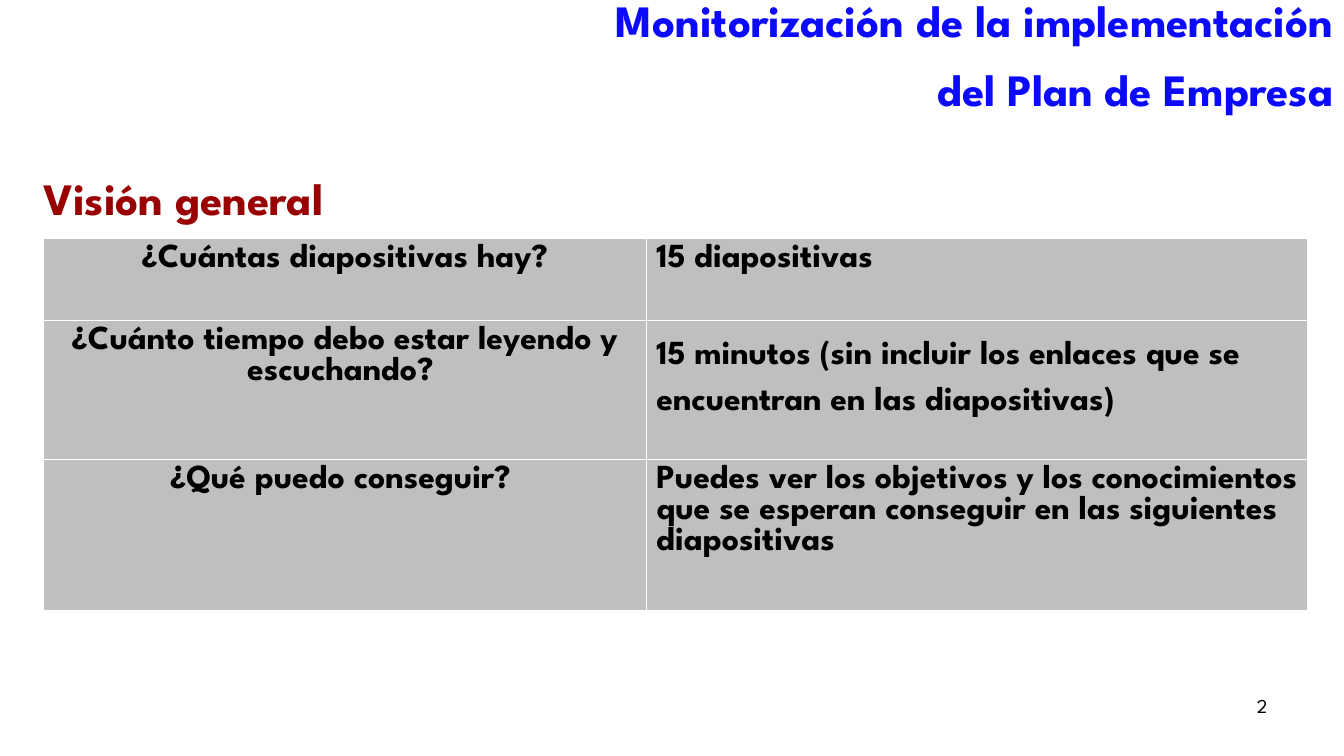
from lxml import etree
from pptx import Presentation
from pptx.dml.color import RGBColor
from pptx.enum.text import MSO_ANCHOR, PP_ALIGN
from pptx.oxml.ns import qn
from pptx.util import Inches, Pt

LEFT, CENTER, RIGHT = PP_ALIGN.LEFT, PP_ALIGN.CENTER, PP_ALIGN.RIGHT
TOP, BOTTOM = MSO_ANCHOR.TOP, MSO_ANCHOR.BOTTOM
FONT = "League Spartan"
COLORS = {
    "title": "0B0AFD",
    "heading": "990000",
    "text": "000000",
    "cell": "BFBFBF",
    "border": "FFFFFF",
}
QUESTIONS = [
    ("¿Cuántas diapositivas hay?", "15 diapositivas"),
    ("¿Cuánto tiempo debo estar leyendo y escuchando? ",
     "15 minutos (sin incluir los enlaces que se encuentran en las diapositivas)"),
    ("¿Qué puedo conseguir? ",
     "Puedes ver los objetivos y los conocimientos que se esperan conseguir "
     "en las siguientes diapositivas"),
]
COLUMN_WIDTHS = [5.98, 6.56]
ROW_HEIGHTS = [0.81, 1.38, 1.5]


def write(frame, text, size, color, bold=True, align=LEFT, spacing=None):
    frame.word_wrap = True
    para = frame.paragraphs[0]
    para.text = text
    para.alignment = align
    if spacing:
        para.line_spacing = spacing
    for span in para.runs:
        span.font.name = FONT
        span.font.size = Pt(size)
        span.font.bold = bold
        span.font.color.rgb = RGBColor.from_string(COLORS[color])


def add_text(page, box, text, size, color, anchor=TOP, top_inset=0.05, **style):
    frame = page.shapes.add_textbox(*map(Inches, box)).text_frame
    frame.vertical_anchor = anchor
    frame.margin_top = Inches(top_inset)
    write(frame, text, size, color, **style)


def style_cell(cell):
    properties = cell._tc.get_or_add_tcPr()
    for side in ("a:lnL", "a:lnR", "a:lnT", "a:lnB"):
        line = etree.SubElement(properties, qn(side), w=str(Pt(1)))
        fill = etree.SubElement(line, qn("a:solidFill"))
        etree.SubElement(fill, qn("a:srgbClr"), val=COLORS["border"])
    cell.fill.solid()
    cell.fill.fore_color.rgb = RGBColor.from_string(COLORS["cell"])


def add_questions(page, box):
    table = page.shapes.add_table(
        len(QUESTIONS), len(COLUMN_WIDTHS), *map(Inches, box)).table
    for column, width in zip(table.columns, COLUMN_WIDTHS):
        column.width = Inches(width)
    for index, (row, height) in enumerate(zip(table.rows, ROW_HEIGHTS)):
        row.height = Inches(height)
        question, answer = row.cells
        write(question.text_frame, QUESTIONS[index][0], 24, "text", align=CENTER)
        write(answer.text_frame, QUESTIONS[index][1], 24, "text",
              spacing=1.5 if index == 1 else None)
        for cell in row.cells:
            style_cell(cell)


def build_overview(deck):
    page = deck.slides.add_slide(deck.slide_layouts[6])
    add_text(page, (0.92, 0, 12.41, 1.2),
             "Monitorización de la implementación\vdel Plan de Empresa",
             32, "title", anchor=BOTTOM, align=RIGHT, spacing=1.29)
    add_text(page, (0.33, 1.49, 4.3, 0.67), "Visión general",
             32, "heading", top_inset=0.2)
    add_text(page, (9.56, 6.83, 3.11, 0.52), "2", 14, "text",
             bold=False, align=RIGHT)
    add_questions(page, (0.43, 2.37, sum(COLUMN_WIDTHS), sum(ROW_HEIGHTS)))


def main():
    deck = Presentation()
    deck.slide_width = Inches(13.33)
    deck.slide_height = Inches(7.5)
    build_overview(deck)
    deck.save("out.pptx")


if __name__ == "__main__":
    main()
